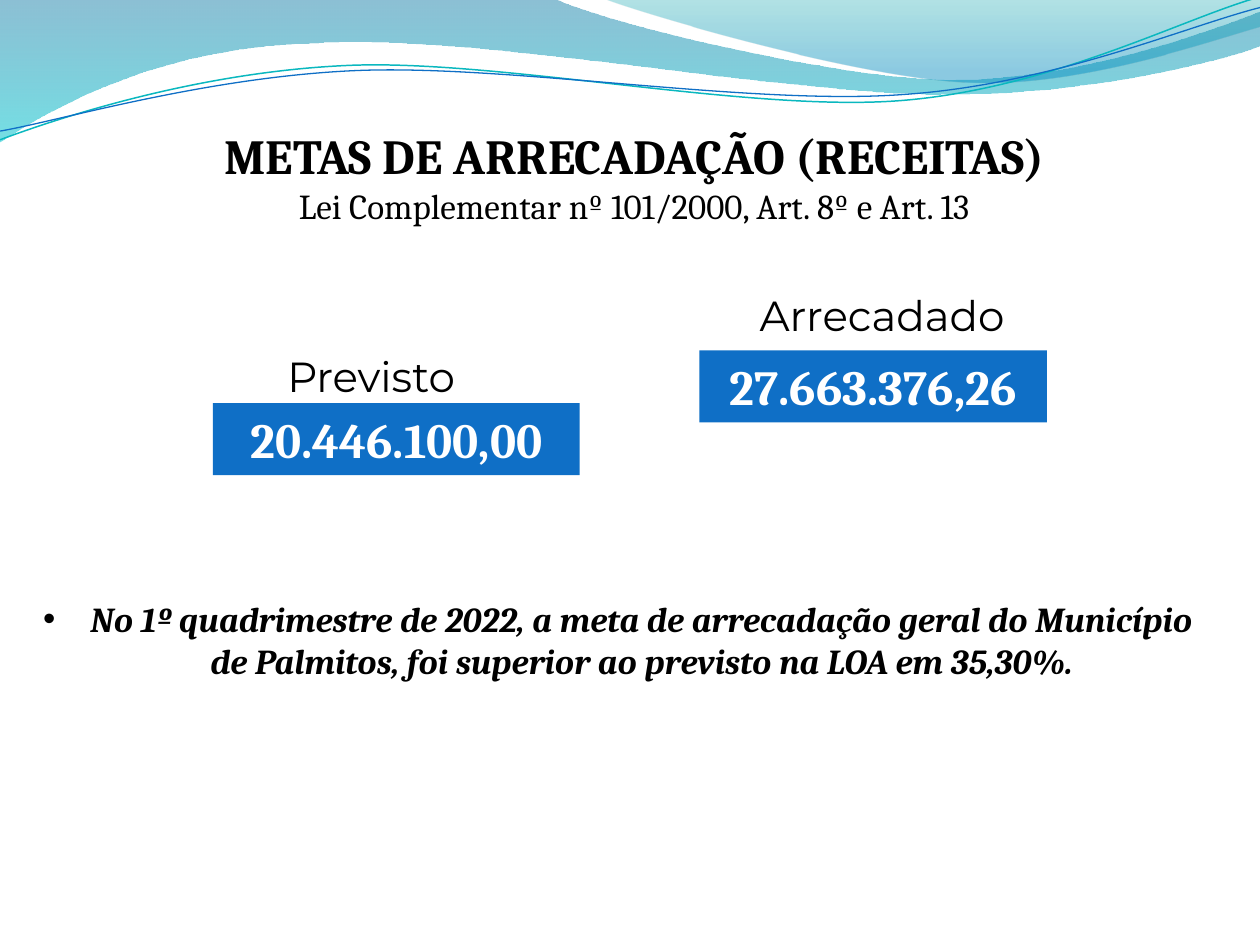
import pptx
import pptx.dml.color
import pptx.enum.shapes
import pptx.enum.text
import pptx.oxml
import pptx.oxml.ns
import pptx.util

Pt = pptx.util.Pt
qn = pptx.oxml.ns.qn


def color(value):
    return pptx.dml.color.RGBColor.from_string(value)


class SlideBuilder:
    """Holds the style and the current slide, with a method for each kind of element."""

    heading_font = "Cambria"
    label_font = "Montserrat"
    ink = "000000"
    blue = "0F6FC6"
    white = "FFFFFF"

    def __init__(self, presentation):
        self.slide = presentation.slides.add_slide(presentation.slide_layouts[6])
        self.slide.background.fill.solid()
        self.slide.background.fill.fore_color.rgb = color(self.white)

    def curve(self, start, segments, close):
        points = [point for segment in segments for point in segment]
        builder = self.slide.shapes.build_freeform(Pt(start[0]), Pt(start[1]))
        builder.add_line_segments([(Pt(x), Pt(y)) for x, y in points], close=close)
        shape = builder.convert_to_shape()
        shape.shadow.inherit = False
        lines = iter(list(shape._element.iter(qn("a:lnTo"))))
        for segment in segments:
            steps = [next(lines) for _ in segment]
            if len(steps) == 3:
                bezier = pptx.oxml.parse_xml(f"<a:cubicBezTo {pptx.oxml.ns.nsdecls('a')}/>")
                steps[0].addprevious(bezier)
                for step in steps:
                    bezier.append(step[0])
                    step.getparent().remove(step)
        return shape

    def wave(self, start, segments, stops):
        shape = self.curve(start, segments, True)
        shape.line.fill.background()
        shape.fill.gradient()
        shape.fill.gradient_angle = 270
        for stop, (position, value, _) in zip(shape.fill.gradient_stops, stops):
            stop.position = position
            stop.color.rgb = color(value)
        tints = list(shape._element.spPr.iter(qn("a:srgbClr")))
        for tint, (_, _, opacity) in zip(tints, stops):
            alpha = tint.makeelement(qn("a:alpha"), {"val": str(opacity * 1000)})
            tint.append(alpha)

    def swoosh(self, start, segments, value, width):
        shape = self.curve(start, segments, False)
        shape.fill.background()
        shape.line.color.rgb = color(value)
        shape.line.width = Pt(width)

    def fill_text(self, shape, lines, font, value, italic=False, bullet=False):
        frame = shape.text_frame
        frame.word_wrap = True
        frame.auto_size = pptx.enum.text.MSO_AUTO_SIZE.SHAPE_TO_FIT_TEXT
        frame.vertical_anchor = pptx.enum.text.MSO_ANCHOR.TOP
        for index, (text, size, bold) in enumerate(lines):
            paragraph = frame.add_paragraph() if index else frame.paragraphs[0]
            paragraph.text = text
            paragraph.alignment = pptx.enum.text.PP_ALIGN.CENTER
            if bullet:
                properties = paragraph._p.get_or_add_pPr()
                properties.set("marL", str(Pt(27)))
                properties.set("indent", str(Pt(-27)))
                for tag, key, setting in (("a:buFont", "typeface", "Arial"), ("a:buChar", "char", "•")):
                    properties.append(properties.makeelement(qn(tag), {key: setting}))
            paragraph.font.name = font
            paragraph.font.size = Pt(size)
            paragraph.font.bold = bold
            paragraph.font.italic = italic
            paragraph.font.color.rgb = color(value)

    def text(self, left, top, width, height, lines, font=heading_font, **options):
        box = self.slide.shapes.add_textbox(Pt(left), Pt(top), Pt(width), Pt(height))
        self.fill_text(box, lines, font, self.ink, **options)

    def label(self, left, top, width, text):
        self.text(left, top, width, 36, [(text, 24, False)], self.label_font)

    def amount(self, left, top, width, text):
        rectangle = pptx.enum.shapes.MSO_SHAPE.RECTANGLE
        shape = self.slide.shapes.add_shape(rectangle, Pt(left), Pt(top), Pt(width), Pt(41.2))
        shape.shadow.inherit = False
        shape.fill.solid()
        shape.fill.fore_color.rgb = color(self.blue)
        shape.line.fill.background()
        self.fill_text(shape, [(text, 28, True)], self.heading_font, self.white)


def main():
    presentation = pptx.Presentation()
    presentation.slide_width = Pt(720)
    presentation.slide_height = Pt(540)
    builder = SlideBuilder(presentation)

    builder.wave((0, 0), [
        [(316.8, -0.7)],
        [(342.7, 12.2), (478.1, 45.4), (545.8, 45.4)],
        [(614.2, 45.4), (689.8, 18.7), (720, 6.5)],
        [(720.7, 25.9)],
        [(707.8, 31.7), (626.4, 54.7), (537.1, 54)],
        [(447.8, 54), (275, 20.2), (185, 24.5)],
        [(92.9, 25.9), (33.1, 59.8), (-0.7, 81.4)],
    ], [(0, "0074A1", 45), (1, "00C6CF", 55)])
    builder.wave((344.9, -0.7), [
        [(366.5, 7.9), (491, 44.6), (553.7, 46.8)],
        [(616.3, 49.7), (691.9, 23), (720, 15.1)],
        [(720, 0)],
    ], [(0, "00A1A9", 30), (0.8, "008BBF", 45)])
    builder.swoosh((0, 79.9), [
        [(34.6, 67), (113.8, 41), (199.4, 37.4)],
        [(284.4, 33.8), (427, 64.1), (513.4, 57.6)],
        [(599.8, 51.1), (675.4, 10.8), (718.6, -1.4)],
    ], "0AB8BF", 0.85)
    builder.swoosh((0, 74.9), [
        [(33.8, 69.1), (118.1, 43.9), (203.8, 40.3)],
        [(290.2, 36.7), (429.8, 60.5), (516.2, 54)],
        [(601.9, 48.2), (677.5, 15.1), (720, 4.3)],
    ], builder.blue, 0.75)

    builder.text(76.3, 68.4, 572.4, 65.5, [
        ("METAS DE ARRECADAÇÃO (RECEITAS)", 28, True),
        ("Lei Complementar nº 101/2000, Art. 8º e Art. 13", 20, False),
    ])
    builder.text(17.3, 337.7, 671.8, 55.4, [
        ("No 1º quadrimestre de 2022, a meta de arrecadação geral do Município "
         "de Palmitos, foi superior ao previsto na LOA em 35,30%.", 20, True),
    ], italic=True, bullet=True)
    builder.amount(121.7, 230.4, 209.5, "20.446.100,00")
    builder.amount(399.6, 200.2, 198.7, "27.663.376,26")
    builder.label(143.3, 196.6, 137.5, "Previsto")
    builder.label(409.7, 162, 188.6, "Arrecadado")

    presentation.save("out.pptx")


if __name__ == "__main__":
    main()
